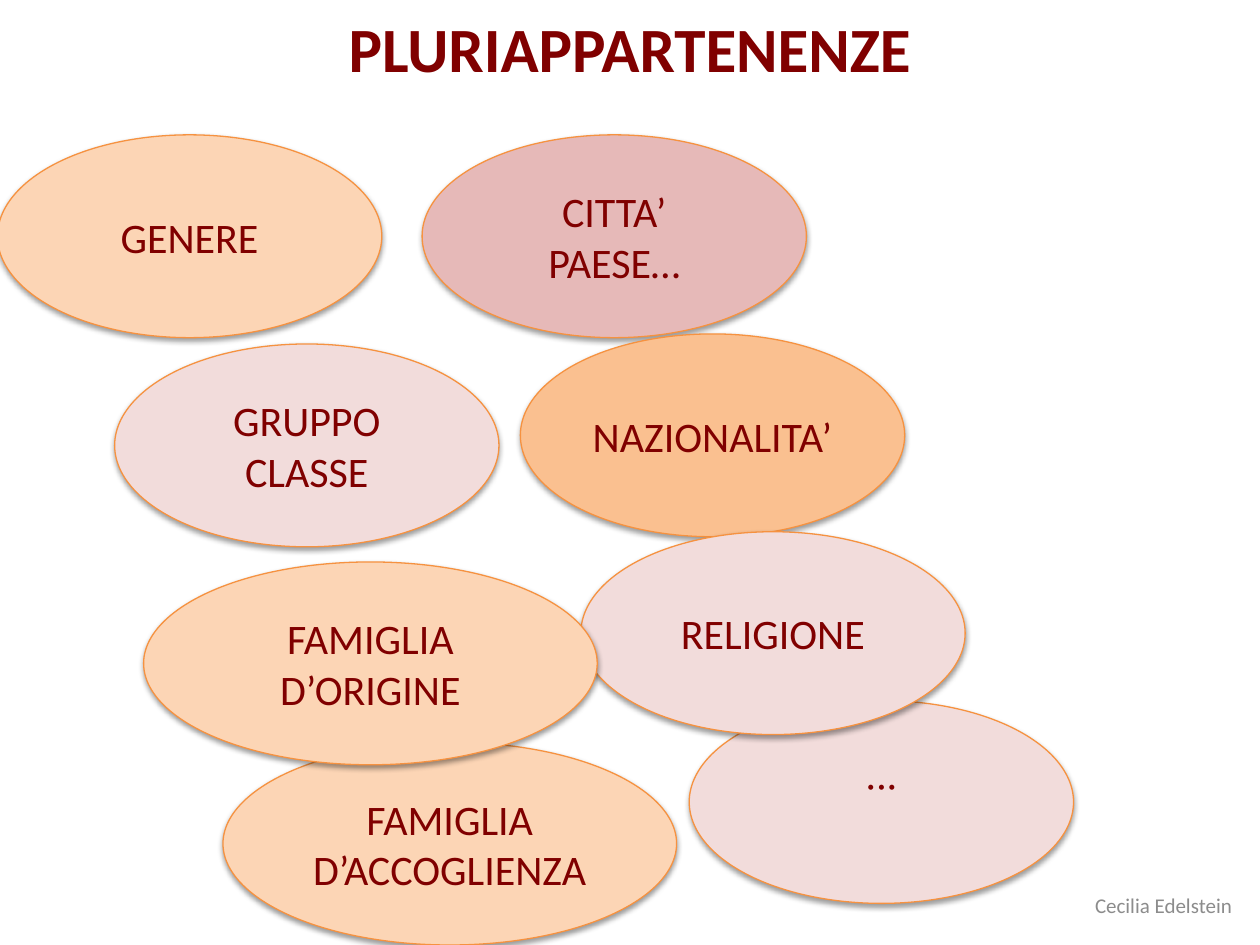
from lxml.etree import SubElement
from pptx import Presentation
from pptx.dml.color import RGBColor
from pptx.enum.shapes import MSO_SHAPE
from pptx.enum.text import MSO_ANCHOR, PP_ALIGN
from pptx.oxml.ns import qn
from pptx.util import Inches, Pt

MAROON = RGBColor(0x80, 0x00, 0x00)
GREY = RGBColor(0x8C, 0x8C, 0x8C)
ORANGE_EDGE = RGBColor(0xF6, 0x92, 0x40)
PEACH = RGBColor(0xFC, 0xD5, 0xB5)
APRICOT = RGBColor(0xFA, 0xC0, 0x90)
ROSE = RGBColor(0xE6, 0xB9, 0xB8)
PALE_ROSE = RGBColor(0xF2, 0xDC, 0xDB)

TITLE_FONT = {"name": "Calibri", "size": Pt(36), "bold": True}
GROUP_FONT = {"name": "Calibri", "size": Pt(24)}
AUTHOR_FONT = {"name": "Calibri", "size": Pt(12)}

NARROW, WIDE, HEIGHT = 3.05, 3.6, 1.61

# Memberships from back to front: lines, left, top, width, fill
MEMBERSHIPS = [
    (["GENERE"], -0.02, 1.07, NARROW, PEACH),
    (["GRUPPO CLASSE"], 0.91, 2.73, NARROW, PALE_ROSE),
    (["CITTA’", "PAESE…"], 3.35, 1.07, NARROW, ROSE),
    (["FAMIGLIA D’ACCOGLIENZA"], 1.77, 5.89, WIDE, PEACH),
    (["…"], 5.47, 5.56, NARROW, PALE_ROSE),
    (["NAZIONALITA’"], 4.13, 2.65, NARROW, APRICOT),
    (["RELIGIONE"], 4.61, 4.22, NARROW, PALE_ROSE),
    (["FAMIGLIA", "D’ORIGINE"], 1.14, 4.46, WIDE, PEACH),
]


def write_lines(frame, lines, font_values, color, anchor=MSO_ANCHOR.MIDDLE):
    frame.word_wrap = True
    frame.vertical_anchor = anchor
    for index, line in enumerate(lines):
        paragraph = frame.paragraphs[0] if index == 0 else frame.add_paragraph()
        paragraph.alignment = PP_ALIGN.CENTER
        run = paragraph.add_run()
        run.text = line
        for attribute, value in font_values.items():
            setattr(run.font, attribute, value)
        run.font.color.rgb = color


def add_soft_shadow(shape):
    shape.shadow.inherit = False
    effects = shape._element.spPr.find(qn("a:effectLst"))
    shadow = SubElement(effects, qn("a:outerShdw"), blurRad=str(Pt(3.1)),
                        dist=str(Pt(1.6)), dir="5400000", rotWithShape="0")
    black = SubElement(shadow, qn("a:srgbClr"), val="000000")
    SubElement(black, qn("a:alpha"), val="38000")


def add_label(slide, box, text, font_values, color, anchor):
    label = slide.shapes.add_textbox(*map(Inches, box))
    write_lines(label.text_frame, [text], font_values, color, anchor)


def add_membership(slide, box, lines, fill):
    ellipse = slide.shapes.add_shape(MSO_SHAPE.OVAL, *map(Inches, box))
    ellipse.fill.solid()
    ellipse.fill.fore_color.rgb = fill
    ellipse.line.color.rgb = ORANGE_EDGE
    ellipse.line.width = Pt(0.75)
    add_soft_shadow(ellipse)
    write_lines(ellipse.text_frame, lines, GROUP_FONT, MAROON)
    return ellipse


def main():
    presentation = Presentation()
    presentation.slide_width = Inches(10)
    presentation.slide_height = Inches(7.5)
    slide = presentation.slides.add_slide(presentation.slide_layouts[6])

    # Title
    add_label(slide, (0, 0.03, 10, 0.71), "PLURIAPPARTENENZE",
              TITLE_FONT, MAROON, MSO_ANCHOR.TOP)

    # Overlapping memberships
    for lines, left, top, width, fill in MEMBERSHIPS:
        ellipse = add_membership(slide, (left, top, width, HEIGHT), lines, fill)
        if lines == ["…"]:
            # The open-ended membership is flipped, which raises its dots
            ellipse._element.spPr.find(qn("a:xfrm")).set("flipV", "1")

    # Author
    add_label(slide, (8.47, 7.06, 1.53, 0.24), "Cecilia Edelstein",
              AUTHOR_FONT, GREY, MSO_ANCHOR.MIDDLE)

    presentation.save("out.pptx")


if __name__ == "__main__":
    main()
